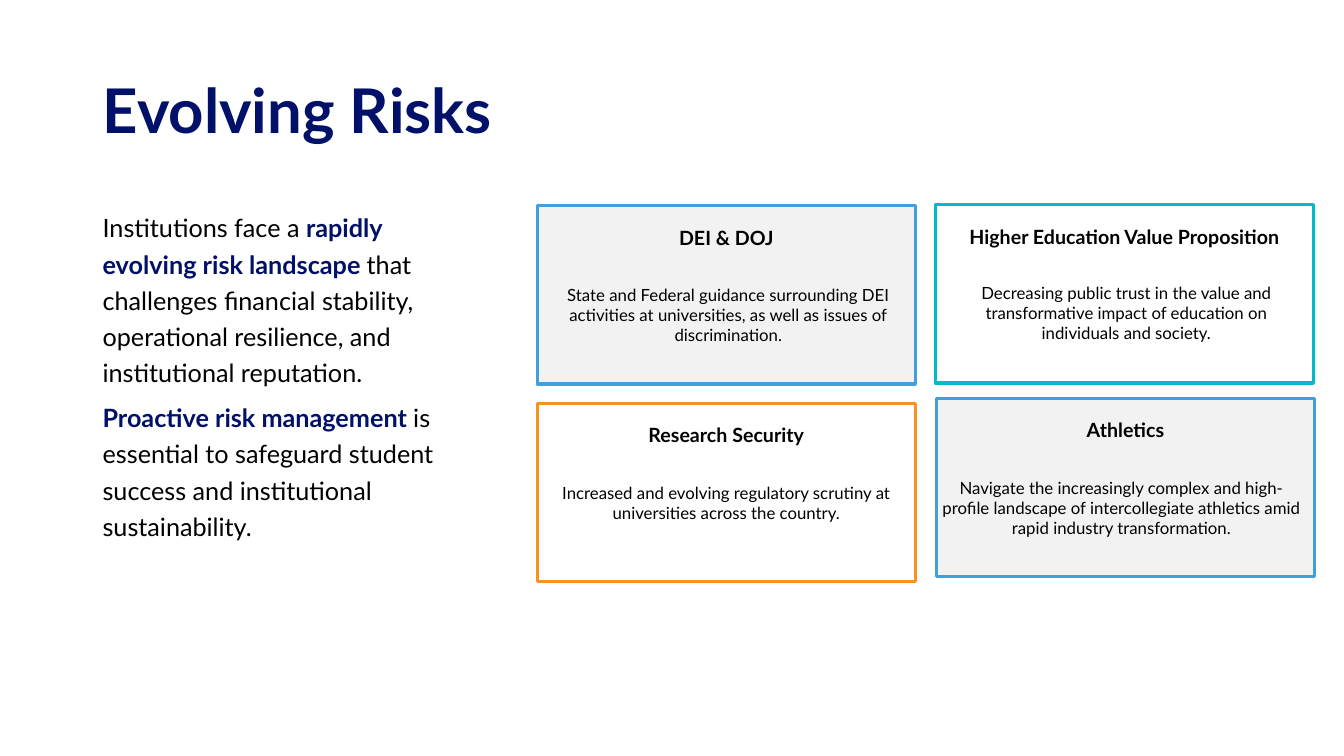
from dataclasses import dataclass

from pptx import Presentation
from pptx.dml.color import RGBColor
from pptx.enum.shapes import MSO_SHAPE as Shape
from pptx.enum.text import MSO_ANCHOR as Anchor, PP_ALIGN as Align
from pptx.util import Inches, Pt

NAVY = RGBColor(0x01, 0x11, 0x69)
BLACK = RGBColor(0, 0, 0)
WHITE = RGBColor(0xFF, 0xFF, 0xFF)
GREY = RGBColor(0xF2, 0xF2, 0xF2)
BLUE = RGBColor(0x3F, 0xA0, 0xDD)
ORANGE = RGBColor(0xF7, 0x93, 0x1E)
TEAL = RGBColor(0x00, 0xBB, 0xC9)

WIDE, HIGH = Inches(13.33), Inches(7.5)
CARD_W, CARD_H, NOTE_H = 28.13, 23.6, 14.4


@dataclass(frozen=True)
class Card:
    x: float
    y: float
    shift: float
    drop: float
    fill: RGBColor
    edge: RGBColor
    head: str
    note: str


CARDS = [
    Card(69.68, 52.67, -0.3, 9.2, GREY, BLUE, "Athletics",
         "Navigate the increasingly complex and high-profile landscape of "
         "intercollegiate athletics amid rapid industry transformation."),
    Card(39.98, 27.2, 0.15, 9.07, GREY, BLUE, "DEI & DOJ",
         "State and Federal guidance surrounding DEI activities at "
         "universities, as well as issues of discrimination."),
    Card(39.98, 53.33, 0, 9.2, WHITE, ORANGE, "Research Security",
         "Increased and evolving regulatory scrutiny at universities "
         "across the country."),
    Card(69.6, 27.07, 0.15, 8.93, WHITE, TEAL,
         "Higher Education Value Proposition",
         "Decreasing public trust in the value and transformative impact "
         "of education on individuals and society."),
]

INTRO = [
    [("Institutions face a ", False),
     ("rapidly evolving risk landscape ", True),
     ("that challenges financial stability, operational resilience, "
      "and institutional reputation.", False)],
    [("Proactive risk management ", True),
     ("is essential to safeguard student success and institutional "
      "sustainability.", False)],
]


def place(x: float, y: float, w: float, h: float) -> tuple[int, int, int, int]:
    return (int(WIDE * x / 100), int(HIGH * y / 100),
            int(WIDE * w / 100), int(HIGH * h / 100))


def style(font, size: float, color: RGBColor, bold: bool) -> None:
    font.name, font.size, font.bold = "Lato", Pt(size), bold
    font.color.rgb = color


def label(frame, text: str, size: float, bold: bool, top: float) -> None:
    frame.word_wrap = True
    frame.vertical_anchor = Anchor.TOP
    frame.margin_top, frame.margin_bottom = Inches(top), Inches(0.2)
    frame.text = text
    para = frame.paragraphs[0]
    para.alignment = Align.CENTER
    style(para.runs[0].font, size, BLACK, bold)


def draw_card(shapes, card: Card) -> None:
    box = shapes.add_shape(Shape.RECTANGLE,
                           *place(card.x, card.y, CARD_W, CARD_H))
    box.shadow.inherit = False
    box.fill.solid()
    box.fill.fore_color.rgb = card.fill
    box.line.color.rgb = card.edge
    box.line.width = Pt(2.25)
    label(box.text_frame, card.head, 14, True, 0.2)
    note = shapes.add_textbox(*place(card.x + card.shift, card.y + card.drop,
                                     CARD_W, NOTE_H))
    label(note.text_frame, card.note, 12, False, 0.1)


def draw_title(title) -> None:
    title.left, title.top, title.width, title.height = place(
        6.9, 5.33, 86.27, 19.33)
    frame = title.text_frame
    frame.text = "Evolving Risks"
    frame.vertical_anchor = Anchor.MIDDLE
    para = frame.paragraphs[0]
    para.alignment = Align.LEFT
    para.line_spacing = 0.9
    style(para.runs[0].font, 44, NAVY, True)


def draw_intro(shapes) -> None:
    frame = shapes.add_textbox(*place(6.9, 26.67, 29.11, 63.47)).text_frame
    frame.word_wrap = True
    for i, parts in enumerate(INTRO):
        para = frame.add_paragraph() if i else frame.paragraphs[0]
        para.line_spacing = 1.2
        para.space_after = Pt(6)
        for text, strong in parts:
            run = para.add_run()
            run.text = text
            style(run.font, 18, NAVY if strong else BLACK, strong)


def main() -> None:
    deck = Presentation()
    deck.slide_width, deck.slide_height = WIDE, HIGH
    slide = deck.slides.add_slide(deck.slide_layouts[5])
    for card in CARDS:
        draw_card(slide.shapes, card)
    draw_title(slide.shapes.title)
    draw_intro(slide.shapes)
    deck.save("out.pptx")


if __name__ == "__main__":
    main()
